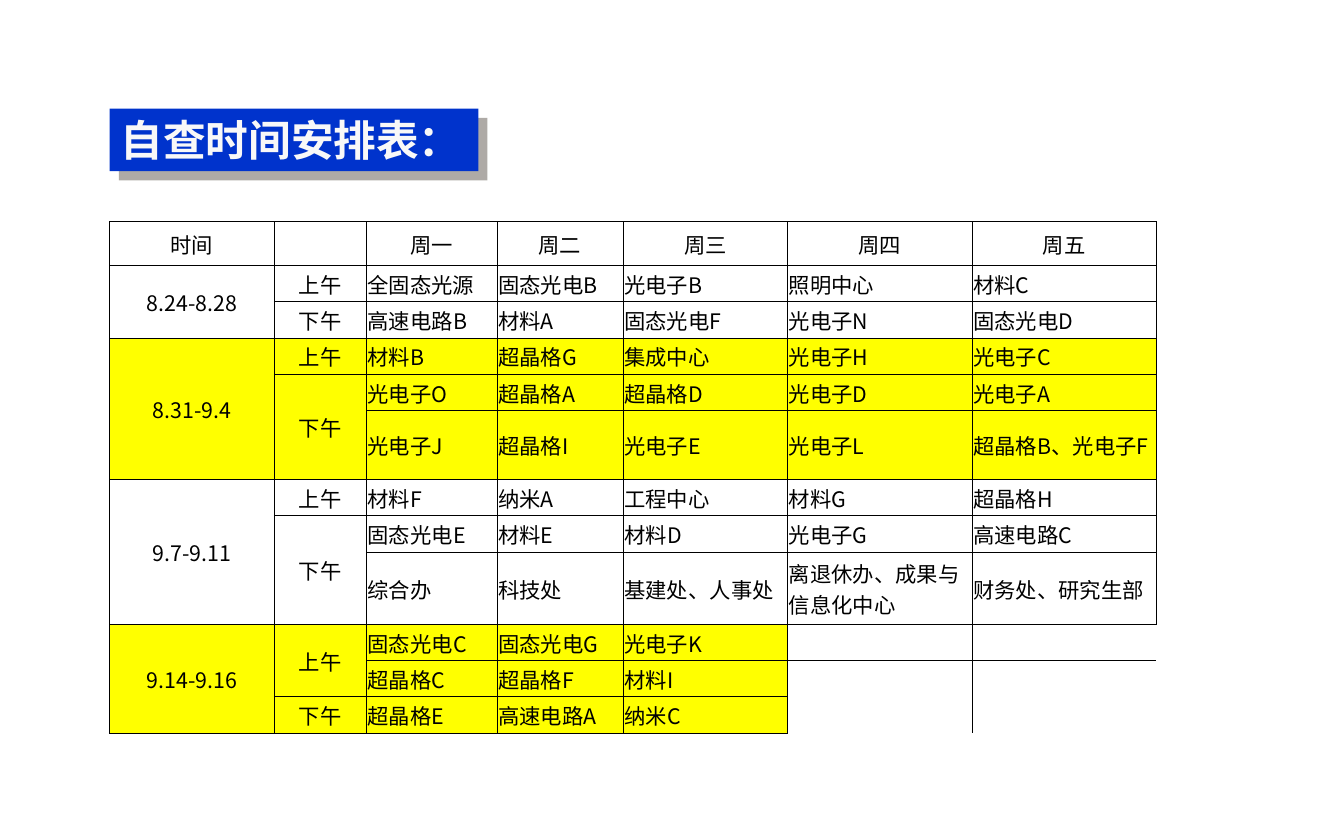
from lxml import etree
from pptx import Presentation
from pptx.dml.color import RGBColor
from pptx.enum.text import MSO_ANCHOR as Anchor, MSO_AUTO_SIZE as AutoSize, PP_ALIGN as Align
from pptx.oxml.ns import qn
from pptx.util import Inches, Pt

FONT = "Noto Sans CJK SC"
COLORS = {"blue": "0033CC", "title": "F8F8F8", "shadow": "5E574E",
          "ink": "000000", "highlight": "FFFF00"}
PLAIN_STYLE = "{2D5ABB26-0587-4C30-8999-92F81FD0307C}"

COLUMN_WIDTHS = [1.5, 0.84, 1.19, 1.15, 1.5, 1.68, 1.68]
ROW_HEIGHT = 0.33
TALL_ROWS = {0: 0.4, 5: 0.63, 8: 0.66}
HEADER = ["时间", "", "周一", "周二", "周三", "周四", "周五"]

# Each week: dates, highlighted or not, then the rows of each half day
WEEKS = [
    ("8.24-8.28", False, [
        ("上午", ["全固态光源 固态光电B 光电子B 照明中心 材料C"]),
        ("下午", ["高速电路B 材料A 固态光电F 光电子N 固态光电D"])]),
    ("8.31-9.4", True, [
        ("上午", ["材料B 超晶格G 集成中心 光电子H 光电子C"]),
        ("下午", ["光电子O 超晶格A 超晶格D 光电子D 光电子A",
                "光电子J 超晶格I 光电子E 光电子L 超晶格B、光电子F"])]),
    ("9.7-9.11", False, [
        ("上午", ["材料F 纳米A 工程中心 材料G 超晶格H"]),
        ("下午", ["固态光电E 材料E 材料D 光电子G 高速电路C",
                "综合办 科技处 基建处、人事处 离退休办、成果与信息化中心 财务处、研究生部"])]),
    ("9.14-9.16", True, [
        ("上午", ["固态光电C 固态光电G 光电子K", "超晶格C 超晶格F 材料I"]),
        ("下午", ["超晶格E 高速电路A 纳米C"])]),
]


def add_element(parent, tag, **attributes):
    element = etree.SubElement(parent, qn(tag))
    for name, value in attributes.items():
        element.set(name, str(value))
    return element


def write_text(frame, text, size=14, color="ink", bold=False, align=Align.LEFT):
    para = frame.paragraphs[0]
    para.alignment = align
    if not text:
        add_element(para._p, "a:endParaRPr", sz=size * 100)
        return
    span = para.add_run()
    span.text = text
    span.font.size = Pt(size)
    span.font.bold = bold
    span.font.name = FONT
    span.font.color.rgb = RGBColor.from_string(COLORS[color])
    add_element(span._r.get_or_add_rPr(), "a:ea", typeface=FONT)


def add_title(page, left, top, width, height):
    title = page.shapes.title
    title.left, title.top = Inches(left), Inches(top)
    title.width, title.height = Inches(width), Inches(height)
    title.fill.solid()
    title.fill.fore_color.rgb = RGBColor.from_string(COLORS["blue"])
    title.line.fill.background()
    # Offset shadow
    effects = add_element(title._element.spPr, "a:effectLst")
    shadow = add_element(effects, "a:outerShdw", dist=Pt(8.5), dir=45 * 60000,
                         algn="ctr", rotWithShape=0)
    shade = add_element(shadow, "a:srgbClr", val=COLORS["shadow"])
    add_element(shade, "a:alpha", val=50000)
    # Title text
    frame = title.text_frame
    frame.auto_size = AutoSize.NONE
    frame.word_wrap = False
    frame.vertical_anchor = Anchor.MIDDLE
    frame.margin_top = frame.margin_bottom = 0
    write_text(frame, "自查时间安排表：", size=28, color="title", bold=True)


def draw_borders(cell, sides):
    properties = cell._tc.get_or_add_tcPr()
    for side in sides:
        line = add_element(properties, f"a:ln{side}", w=Pt(0.5))
        fill = add_element(line, "a:solidFill")
        add_element(fill, "a:srgbClr", val=COLORS["ink"])


def format_cell(cell, text, centred, highlighted):
    cell.vertical_anchor = Anchor.MIDDLE
    cell.margin_left = cell.margin_right = cell.margin_top = Inches(0.01)
    cell.margin_bottom = 0
    draw_borders(cell, "LRTB")
    if highlighted:
        cell.fill.solid()
        cell.fill.fore_color.rgb = RGBColor.from_string(COLORS["highlight"])
    else:
        cell.fill.background()
    write_text(cell.text_frame, text, align=Align.CENTER if centred else Align.LEFT)


def schedule_rows():
    """Return the rows as (texts, highlighted), and the merges as (row, column, count)."""
    rows, merges = [(HEADER, False)], []
    for dates, highlighted, halves in WEEKS:
        week_start = len(rows)
        for half, lines in halves:
            merges.append((len(rows), 1, len(lines)))
            for index, line in enumerate(lines):
                labels = [dates if len(rows) == week_start else "", "" if index else half]
                rows.append((labels + line.split(), highlighted))
        merges.append((week_start, 0, len(rows) - week_start))
    return rows, merges


def add_schedule(page, left, top):
    rows, merges = schedule_rows()
    heights = [TALL_ROWS.get(index, ROW_HEIGHT) for index in range(len(rows))]
    table = page.shapes.add_table(
        len(rows), len(COLUMN_WIDTHS), Inches(left), Inches(top),
        Inches(sum(COLUMN_WIDTHS)), Inches(sum(heights))).table
    table.first_row = table.horz_banding = False
    table._tbl.tblPr.find(qn("a:tableStyleId")).text = PLAIN_STYLE
    for column, width in zip(table.columns, COLUMN_WIDTHS):
        column.width = Inches(width)
    for row, height in zip(table.rows, heights):
        row.height = Inches(height)

    # Cells; unused ones only share the edges of their neighbours
    for row, (texts, highlighted) in enumerate(rows):
        for column in range(len(COLUMN_WIDTHS)):
            cell = table.cell(row, column)
            if column < len(texts):
                centred = row == 0 or column < 2
                format_cell(cell, texts[column], centred, highlighted)
            else:
                above = len(rows[row - 1][0]) > column
                draw_borders(cell, ("L" if column == len(texts) else "") + ("T" if above else ""))
                cell.fill.background()
                cell.margin_top = cell.margin_bottom = 0
                write_text(cell.text_frame, "")

    for row, column, count in merges:
        if count > 1:
            table.cell(row, column).merge(table.cell(row + count - 1, column))


def main():
    deck = Presentation()
    deck.slide_width, deck.slide_height = Inches(12.25), Inches(7.5)
    page = deck.slides.add_slide(deck.slide_layouts[5])
    add_title(page, 1, 0.99, 3.36, 0.57)
    add_schedule(page, 1, 2.02)
    deck.save("out.pptx")


if __name__ == "__main__":
    main()
